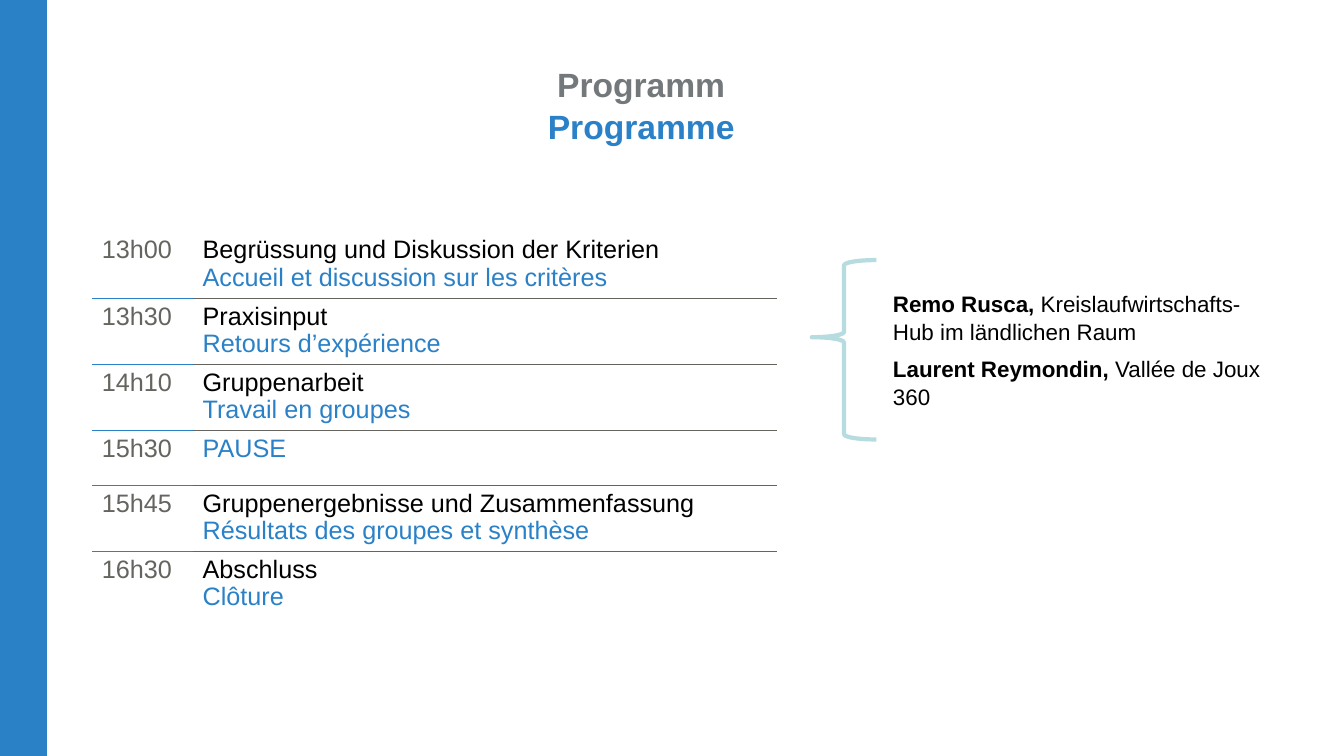
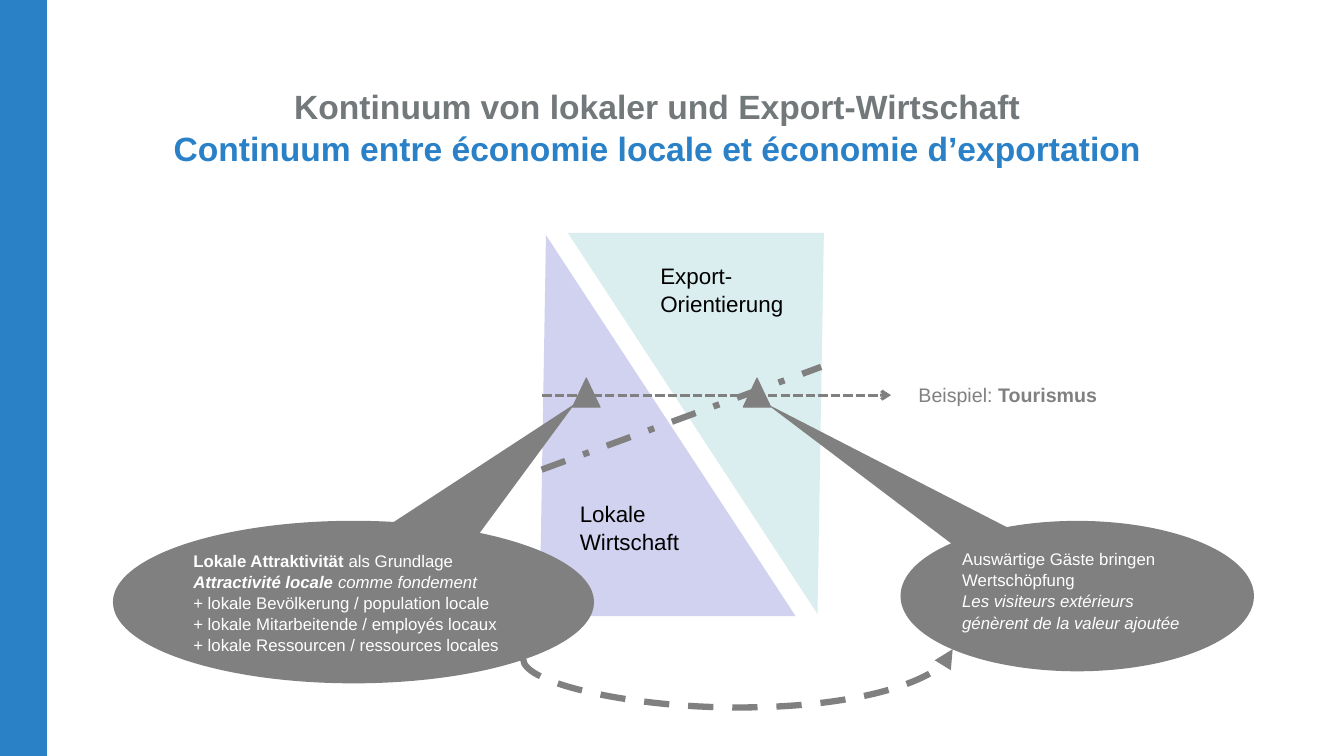
import lxml.etree
import pptx
import pptx.dml.color
import pptx.enum.dml
import pptx.enum.shapes
import pptx.enum.text
import pptx.oxml.ns
import pptx.util

# Shared look
FONT = "Arial"
BLUE = "2A81C7"
TITLE_GRAY = "73787B"
TIME_GRAY = "65645F"
GRAY = "808080"
BLACK = "000000"
WHITE = "FFFFFF"
LILAC = "D1D1F0"
PALE_TEAL = "DAEDEF"
TEAL = "B6DCDF"
LINE_SPACING = 1.05
TABLE_LINE_SPACING = 0.97
NO_GRID_STYLE = "{2D5ABB26-0587-4C30-8999-92F81FD0307C}"

# The grid has 100 columns and 100 rows
SLIDE_WIDTH = pptx.util.Inches(13.33)
SLIDE_HEIGHT = pptx.util.Inches(7.5)

SHAPE = pptx.enum.shapes.MSO_SHAPE
CONNECTOR = pptx.enum.shapes.MSO_CONNECTOR
DASH = pptx.enum.dml.MSO_LINE
ANCHOR = pptx.enum.text.MSO_ANCHOR
ALIGN = pptx.enum.text.PP_ALIGN

PROGRAMME = [
    ("13h00", "Begrüssung und Diskussion der Kriterien",
     "Accueil et discussion sur les critères"),
    ("13h30", "Praxisinput", "Retours d’expérience"),
    ("14h10", "Gruppenarbeit", "Travail en groupes"),
    ("15h30", None, "PAUSE"),
    ("15h45", "Gruppenergebnisse und Zusammenfassung",
     "Résultats des groupes et synthèse"),
    ("16h30", "Abschluss", "Clôture"),
]


def across(columns):
    return round(SLIDE_WIDTH * columns / 100)


def down(rows):
    return round(SLIDE_HEIGHT * rows / 100)


def place(box):
    left, top, width, height = box
    return across(left), down(top), across(width), down(height)


def color(hex_string):
    return pptx.dml.color.RGBColor.from_string(hex_string)


def add_xml(parent, tag, **attributes):
    return lxml.etree.SubElement(parent, pptx.oxml.ns.qn(tag), attributes)


# Text: a list of paragraphs, each a list of (text, style) runs;
# in a style, "b" is bold and "i" italic; "\v" breaks the line
def write(text_frame, paragraphs, size, hex_string, align=ALIGN.LEFT,
          anchor=ANCHOR.TOP, space_after=0, line_spacing=LINE_SPACING):
    text_frame.word_wrap = True
    text_frame.vertical_anchor = anchor
    for index, runs in enumerate(paragraphs):
        paragraph = text_frame.paragraphs[0] if index == 0 else text_frame.add_paragraph()
        paragraph.alignment = align
        paragraph.line_spacing = line_spacing
        paragraph.space_after = pptx.util.Pt(space_after)
        for text, style, *own_color in runs:
            if text == "\v":
                paragraph.add_line_break()
                continue
            run = paragraph.add_run()
            run.text = text
            run.font.name = FONT
            run.font.size = pptx.util.Pt(size)
            run.font.bold = "b" in style
            run.font.italic = "i" in style
            run.font.color.rgb = color(own_color[0] if own_color else hex_string)


def add_shape(slide, kind, box, fill=None, line=None, line_width=0.75, adjustments=()):
    shape = slide.shapes.add_shape(kind, *place(box))
    shape.shadow.inherit = False
    if fill:
        shape.fill.solid()
        shape.fill.fore_color.rgb = color(fill)
    else:
        shape.fill.background()
    if line:
        shape.line.color.rgb = color(line)
        shape.line.width = pptx.util.Pt(line_width)
    else:
        shape.line.fill.background()
    for index, value in enumerate(adjustments):
        shape.adjustments[index] = value
    return shape


def add_text(slide, box, paragraphs, size, hex_string=BLACK, **layout):
    text_box = slide.shapes.add_textbox(*place(box))
    write(text_box.text_frame, paragraphs, size, hex_string, **layout)


def add_callout(slide, box, tip, paragraphs):
    callout = add_shape(slide, SHAPE.OVAL_CALLOUT, box, fill=GRAY, adjustments=tip)
    write(callout.text_frame, paragraphs, 12, WHITE)


# Lines and arrows; begin and end are in EMU
def add_line(slide, begin, end, width, dash, head=None, kind=CONNECTOR.STRAIGHT):
    connector = slide.shapes.add_connector(kind, *begin, *end)
    connector.line.color.rgb = color(GRAY)
    connector.line.width = pptx.util.Pt(width)
    connector.line.dash_style = dash
    properties = connector.element.spPr
    add_xml(properties, "a:effectLst")
    if head:
        add_xml(properties.find(pptx.oxml.ns.qn("a:ln")), "a:tailEnd", type=head)
    return connector


def add_hanging_arrow(slide, begin, end, lowest):
    """Curve that leaves downwards and comes back up: a curved connector turned by 90°."""
    (begin_x, begin_y), (end_x, end_y) = begin, end
    center_x, center_y = (begin_x + end_x) // 2, (begin_y + end_y) // 2
    half_rise, half_span = (begin_y - end_y) // 2, (end_x - begin_x) // 2
    connector = add_line(
        slide, (center_x + half_rise, center_y + half_span),
        (center_x - half_rise, center_y - half_span),
        4.5, DASH.DASH, "triangle", CONNECTOR.CURVE)
    properties = connector.element.spPr
    properties.find(pptx.oxml.ns.qn("a:xfrm")).set("rot", str(90 * 60000))
    geometry = properties.find(pptx.oxml.ns.qn("a:prstGeom"))
    guides = geometry.find(pptx.oxml.ns.qn("a:avLst"))
    if guides is None:
        guides = add_xml(geometry, "a:avLst")
    bend = -round(100000 * (lowest - begin_y) / (begin_y - end_y))
    add_xml(guides, "a:gd", name="adj1", fmla=f"val {bend}")


# Table parts
def add_border(cell, side, hex_string):
    properties = cell._tc.get_or_add_tcPr()
    border = add_xml(properties, f"a:{side}", w=str(pptx.util.Pt(1)))
    add_xml(add_xml(border, "a:solidFill"), "a:srgbClr", val=hex_string)


def add_programme(slide):
    columns = [7.5, 43.5, 7.35, 31]
    rows = [8.77 if german else 7.2 for _, german, _ in PROGRAMME]
    frame = slide.shapes.add_table(
        len(rows), len(columns), *place((6.83, 30.67, sum(columns), sum(rows))))
    frame.element.find(".//" + pptx.oxml.ns.qn("a:tableStyleId")).text = NO_GRID_STYLE
    table = frame.table
    table.first_row = table.horz_banding = False
    for column, width in zip(table.columns, columns):
        column.width = across(width)
    for row, height in zip(table.rows, rows):
        row.height = down(height)

    last = len(rows) - 1
    for index, (time, german, french) in enumerate(PROGRAMME):
        cells = [table.cell(index, column) for column in range(len(columns))]
        for cell, border_color in zip(cells, (BLUE, TIME_GRAY)):
            if index > 0:
                add_border(cell, "lnT", border_color)
            if index < last:
                add_border(cell, "lnB", border_color)
        for cell in cells:
            cell.fill.solid()
            cell.fill.fore_color.rgb = color(WHITE)
        topics = [[(german, "", BLACK)]] if german else []
        topics.append([(french, "")])
        for cell, paragraphs, text_color in (
                (cells[0], [[(time, "")]], TIME_GRAY), (cells[1], topics, BLUE)):
            write(cell.text_frame, paragraphs, 18, text_color,
                  line_spacing=TABLE_LINE_SPACING)
    for column in (2, 3):
        table.cell(3, column).merge(table.cell(last, column))


# Slide frame
def add_band(presentation, slide):
    """Draw the side band once and move it to the master."""
    band = add_shape(slide, SHAPE.RECTANGLE, (0, 0, 3.5, 100), fill="2A81C6")
    presentation.slide_master.shapes.element.insert(2, band.element)


def add_slide(presentation, title_box, german, french):
    slide = presentation.slides.add_slide(presentation.slide_layouts[5])
    title = slide.shapes.title
    title.left, title.top, title.width, title.height = place(title_box)
    title.text_frame.auto_size = pptx.enum.text.MSO_AUTO_SIZE.NONE
    write(title.text_frame, [[(german, "b"), ("\v", ""), (french, "b", BLUE)]],
          24, TITLE_GRAY, align=ALIGN.CENTER, anchor=ANCHOR.MIDDLE)
    return slide


def build_programme(presentation):
    slide = add_slide(presentation, (15.83, 9.6, 63.75, 8.4), "Programm", "Programme")
    add_band(presentation, slide)
    add_programme(slide)
    # Speakers
    add_shape(slide, SHAPE.LEFT_BRACE, (60.4, 34.4, 4.8, 23.73), line=TEAL,
              line_width=3, adjustments=(0.08, 0.43))
    add_text(slide, (65.7, 34, 28.9, 24.4), [
        [("Remo Rusca, ", "b"), ("Kreislaufwirtschafts-Hub im ländlichen Raum", "")],
        [("Laurent Reymondin, ", "b"), ("Vallée de Joux 360", "")],
    ], 16, anchor=ANCHOR.MIDDLE, space_after=6)


def build_continuum(presentation):
    slide = add_slide(presentation, (6.9, 12.5, 84, 8.4),
                      "Kontinuum von lokaler und Export-Wirtschaft",
                      "Continuum entre économie locale et économie d’exportation")
    # Two facing triangles
    for left, top, fill, rotation in ((40.15, 31.1, LILAC, 0), (42.25, 30.8, PALE_TEAL, 180)):
        triangle = add_shape(slide, SHAPE.ISOSCELES_TRIANGLE, (left, top, 19.05, 50.4),
                             fill=fill, adjustments=(0.025,))
        triangle.rotation = rotation
    add_text(slide, (48.4, 33.85, 13.65, 8.5), [[("Export-Orientierung", "")]], 16)
    add_text(slide, (42.4, 65.35, 11.8, 8.5), [[("Lokale Wirtschaft", "")]], 16)

    # Divide and example line
    add_line(slide, (across(40.3), down(62.13)), (across(61.1), down(48.53)),
             4.5, DASH.DASH_DOT)
    add_line(slide, (across(40.35), down(52.27)), (across(66.3), down(52.27)),
             2.25, DASH.SQUARE_DOT, "arrow")
    add_text(slide, (67.6, 49.87, 19.05, 4.5),
             [[("Beispiel: ", ""), ("Tourismus", "b")]], 14, GRAY)
    for left in (42.6, 55.3):
        add_shape(slide, SHAPE.ISOSCELES_TRIANGLE, (left, 50, 2.05, 3.85),
                  fill=GRAY, line=GRAY)

    # Callouts and the arrow between them
    add_callout(slide, (8.4, 68.9, 35.8, 21.5), (0.46, -1.22), [
        [("Lokale Attraktivität ", "b"), ("als Grundlage", "")],
        [("Attractivité locale ", "bi"), ("comme fondement", "i")],
        [("+ lokale Bevölkerung / population locale", "")],
        [("+ lokale Mitarbeitende / employés locaux", "")],
        [("+ lokale Ressourcen / ressources locales", "")],
    ])
    add_callout(slide, (67, 68.9, 26.3, 19.9), (-0.88, -1.28), [
        [("Auswärtige Gäste bringen Wertschöpfung", ""), ("\v", ""),
         ("Les visiteurs extérieurs génèrent de la valeur ajoutée", "i")],
    ])
    add_hanging_arrow(slide, (across(38.92), down(87.2)), (across(70.88), down(85.87)),
                      down(93.6))


def main():
    presentation = pptx.Presentation()
    presentation.slide_width = SLIDE_WIDTH
    presentation.slide_height = SLIDE_HEIGHT
    build_programme(presentation)
    build_continuum(presentation)
    presentation.save("out.pptx")


if __name__ == "__main__":
    main()
